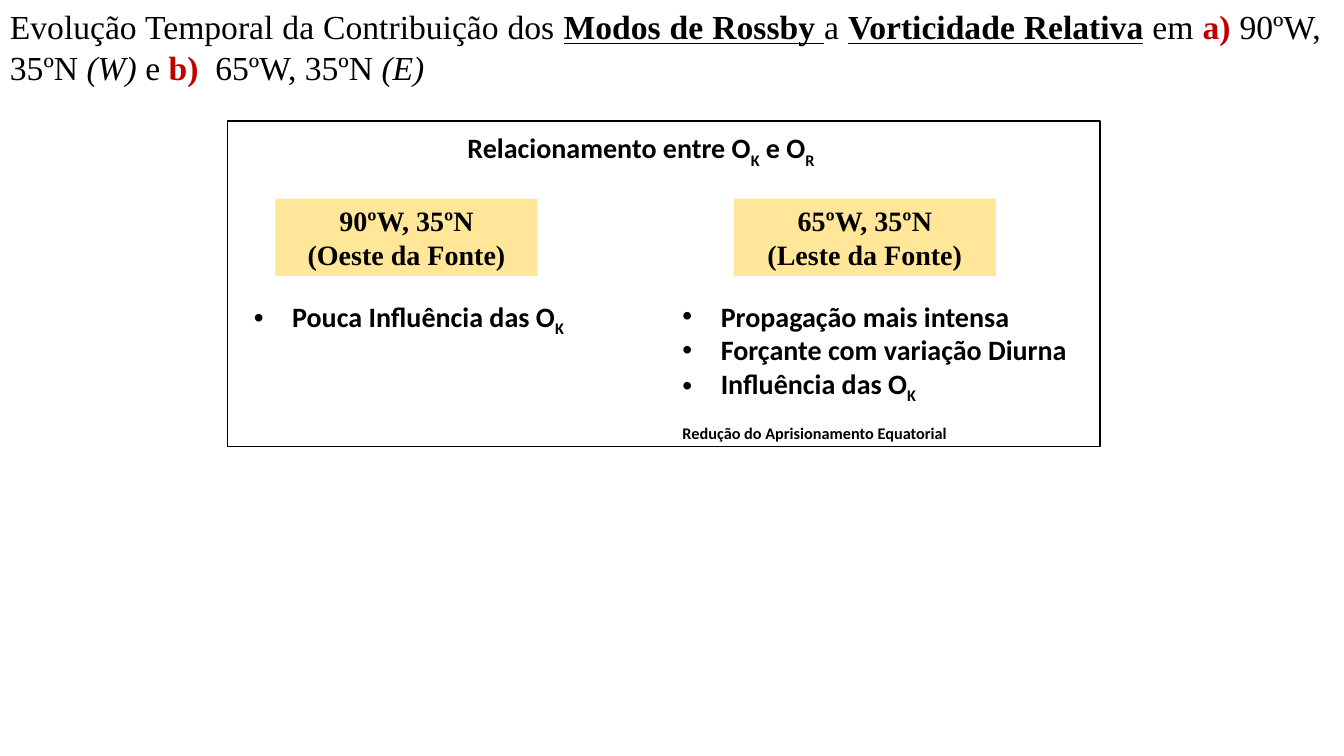
from dataclasses import dataclass, field
from typing import Any

from lxml import etree
from pptx import Presentation
from pptx import util as u
from pptx.dml.color import RGBColor
from pptx.enum import shapes, text
from pptx.oxml import ns

SLIDE_W, SLIDE_H = u.Inches(13.33), u.Inches(7.5)


@dataclass(frozen=True)
class Theme:
    ink: str = "000000"
    accent: str = "C00000"
    card: str = "FFE699"
    serif: str = "Times New Roman"
    sans: str = "Calibri"
    title_size: int = 24
    body_size: int = 20
    border: float = 1
    indent: float = 0.38
    subscript: int = -25000


THEME = Theme()


@dataclass(frozen=True)
class Area:
    """Left, top, width and height in percent of the slide."""
    x: float
    y: float
    w: float
    h: float

    def box(self) -> tuple[int, int, int, int]:
        return (int(SLIDE_W * self.x / 100), int(SLIDE_H * self.y / 100),
                int(SLIDE_W * self.w / 100), int(SLIDE_H * self.h / 100))


@dataclass(frozen=True)
class Run:
    words: str
    font: dict[str, Any] = field(default_factory=dict)
    color: str = THEME.ink
    sub: bool = False


@dataclass(frozen=True)
class Para:
    runs: list[Run]
    bullet: bool = False


@dataclass(frozen=True)
class Site:
    """A point studied: its card and the list of findings under it."""
    card_x: float
    name: str
    side: str
    list_area: Area
    findings: list[Para]


ITALIC = {"italic": True}
BOLD = {"bold": True}
KEY = {"bold": True, "underline": True}
TITLE_FONT = {"name": THEME.serif, "size": u.Pt(THEME.title_size)}
CARD_FONT = {"name": THEME.serif, "size": u.Pt(THEME.body_size), "bold": True}
BODY_FONT = {**CARD_FONT, "name": THEME.sans}

TITLE = [
    Run("Evolução Temporal da Contribuição dos "), Run("Modos de Rossby ", KEY),
    Run("a "), Run("Vorticidade Relativa", KEY), Run(" em "),
    Run("a)", BOLD, THEME.accent), Run(" 90ºW, 35ºN "), Run("(W)", ITALIC),
    Run(" e"), Run(" b)  ", BOLD, THEME.accent), Run("65ºW, 35ºN "),
    Run("(E)", ITALIC),
]
HEADING = [Run("Relacionamento entre O"), Run("K", sub=True),
           Run(" e O"), Run("R", sub=True)]

TITLE_AREA = Area(0, 0, 99, 12.27)
PANEL_AREA = Area(16.95, 16, 64.9, 43.07)
HEADING_AREA = Area(33.6, 16.67, 28.2, 5.87)
CARD_Y, CARD_W, CARD_H = 26.27, 19.5, 10.27
LIST_Y = 38.93

SITES = [
    Site(20.5, "90ºW, 35ºN", "(Oeste da Fonte)", Area(18.15, LIST_Y, 26.4, 5.87),
         [Para([Run("Pouca Influência das O"), Run("K", sub=True)], True)]),
    Site(54.6, "65ºW, 35ºN", "(Leste da Fonte)", Area(50.04, LIST_Y, 33.3, 17.87),
         [Para([Run("Propagação mais intensa")], True),
          Para([Run("Forçante com variação Diurna")], True),
          Para([Run("Influência das O"), Run("K", sub=True)], True),
          Para([Run("Redução do Aprisionamento Equatorial", sub=True)])]),
]


def add_bullet(p: Any) -> None:
    pPr = p._p.get_or_add_pPr()
    indent = u.Inches(THEME.indent)
    pPr.set("marL", str(indent))
    pPr.set("indent", str(-indent))
    etree.SubElement(pPr, ns.qn("a:buFont")).set("typeface", "Arial")
    etree.SubElement(pPr, ns.qn("a:buChar")).set("char", "•")


def write(sp: Any, paras: list[Para], font: dict[str, Any],
          align: Any = text.PP_ALIGN.LEFT,
          anchor: Any = text.MSO_ANCHOR.TOP) -> None:
    tf = sp.text_frame
    tf.word_wrap = True
    tf.vertical_anchor = anchor
    for i, para in enumerate(paras):
        p = tf.add_paragraph() if i else tf.paragraphs[0]
        p.alignment = align
        if para.bullet:
            add_bullet(p)
        for run in para.runs:
            r = p.add_run()
            r.text = run.words
            for key, value in {**font, **run.font}.items():
                setattr(r.font, key, value)
            r.font.color.rgb = RGBColor.from_string(run.color)
            if run.sub:
                r.font._element.set("baseline", str(THEME.subscript))


def add_rect(s: Any, area: Area, fill: str | None = None,
             line: str | None = None) -> Any:
    sp = s.shapes.add_shape(shapes.MSO_SHAPE.RECTANGLE, *area.box())
    sp.shadow.inherit = False
    for part, color in ((sp.fill, fill), (sp.line.fill, line)):
        if color is None:
            part.background()
        else:
            part.solid()
            part.fore_color.rgb = RGBColor.from_string(color)
    if line:
        sp.line.width = u.Pt(THEME.border)
    return sp


def add_site(s: Any, site: Site) -> None:
    card = add_rect(s, Area(site.card_x, CARD_Y, CARD_W, CARD_H), THEME.card)
    write(card, [Para([Run(site.name)]), Para([Run(site.side)])],
          CARD_FONT, text.PP_ALIGN.CENTER)
    write(s.shapes.add_textbox(*site.list_area.box()), site.findings, BODY_FONT)


def main() -> None:
    prs = Presentation()
    prs.slide_width, prs.slide_height = SLIDE_W, SLIDE_H
    s = prs.slides.add_slide(prs.slide_layouts[6])
    write(s.shapes.add_textbox(*TITLE_AREA.box()), [Para(TITLE)], TITLE_FONT,
          text.PP_ALIGN.JUSTIFY, text.MSO_ANCHOR.MIDDLE)
    for site in SITES:
        add_site(s, site)
    add_rect(s, PANEL_AREA, line=THEME.ink)
    write(s.shapes.add_textbox(*HEADING_AREA.box()), [Para(HEADING)],
          BODY_FONT, text.PP_ALIGN.CENTER)
    prs.save("out.pptx")


if __name__ == "__main__":
    main()
